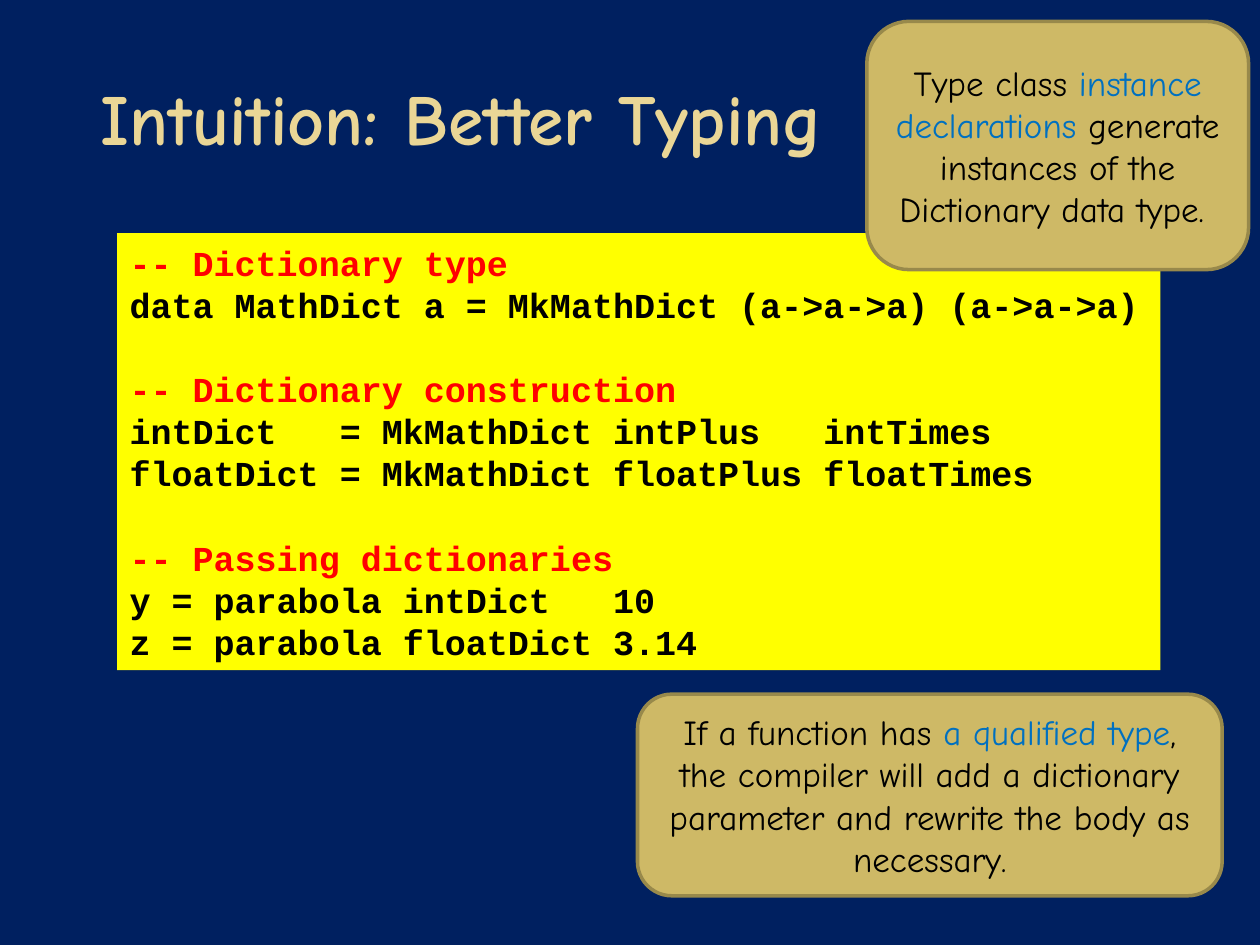
from pptx import Presentation
from pptx.dml.color import RGBColor
from pptx.enum.shapes import MSO_SHAPE
from pptx.enum.text import MSO_ANCHOR, PP_ALIGN
from pptx.util import Inches, Pt

RECTANGLE = MSO_SHAPE.RECTANGLE
CALLOUT = MSO_SHAPE.ROUNDED_RECTANGULAR_CALLOUT
TOP, MIDDLE = MSO_ANCHOR.TOP, MSO_ANCHOR.MIDDLE
LEFT, CENTER = PP_ALIGN.LEFT, PP_ALIGN.CENTER

COLORS = {
    "navy": "002060",
    "cream": "EAD696",
    "yellow": "FFFF00",
    "sand": "CEB966",
    "bronze": "98894B",
    "red": "FF0000",
    "blue": "0070C0",
    "black": "000000",
}
SANS, MONO = "Comic Neue", "Courier New"


def color(name):
    return RGBColor.from_string(COLORS[name])


def add_span(para, text, *, font=SANS, size=20, ink="black", bold=False):
    span = para.add_run()
    span.text = text
    span.font.name = font
    span.font.size = Pt(size)
    span.font.bold = bold
    span.font.color.rgb = color(ink)


deck = Presentation()
deck.slide_width, deck.slide_height = Inches(10), Inches(7.5)
page = deck.slides.add_slide(deck.slide_layouts[6])
page.background.fill.solid()
page.background.fill.fore_color.rgb = color("navy")

# Title
title = page.shapes.add_textbox(Inches(0.5), Inches(0.3), Inches(6.33), Inches(1.25))
title.text_frame.word_wrap = True
title.text_frame.vertical_anchor = MIDDLE
para = title.text_frame.paragraphs[0]
para.alignment = CENTER
add_span(para, "Intuition: Better Typing", size=41, ink="cream", bold=True)

# Code panel: each section is a red comment followed by its code
SECTIONS = [
    ("-- Dictionary type",
     "data MathDict a = MkMathDict (a->a->a) (a->a->a)"),
    ("-- Dictionary construction",
     "intDict   = MkMathDict intPlus   intTimes",
     "floatDict = MkMathDict floatPlus floatTimes"),
    ("-- Passing dictionaries",
     "y = parabola intDict   10",
     "z = parabola floatDict 3.14"),
]
LINE_PITCH = Pt(24)
panel = page.shapes.add_shape(
    RECTANGLE, Inches(0.93), Inches(1.85), Inches(8.28), Inches(3.47))
panel.shadow.inherit = False
panel.fill.solid()
panel.fill.fore_color.rgb = color("yellow")
panel.line.fill.background()
frame = panel.text_frame
frame.word_wrap = False
frame.vertical_anchor = TOP
frame.margin_top = Inches(0.07)
for section_number, lines in enumerate(SECTIONS):
    for line_number, line in enumerate(lines):
        is_comment = line_number == 0
        is_first = is_comment and section_number == 0
        para = frame.paragraphs[0] if is_first else frame.add_paragraph()
        para.alignment = LEFT
        para.line_spacing = LINE_PITCH
        if is_comment and not is_first:
            para.space_before = LINE_PITCH
        add_span(para, line, font=MONO, ink="red" if is_comment else "black", bold=True)

# Callouts
CALLOUTS = [
    ((6.88, 0.17, 3.03, 1.97),
     [("Type class ", "black"),
      ("instance declarations ", "blue"),
      ("generate instances of the Dictionary data type. ", "black")]),
    ((5.06, 5.51, 4.64, 1.6),
     [("If a function has ", "black"),
      ("a qualified type", "blue"),
      (", the compiler will add a dictionary parameter "
       "and rewrite the body as necessary.", "black")]),
]
for bounds, spans in CALLOUTS:
    callout = page.shapes.add_shape(CALLOUT, *map(Inches, bounds))
    for index, value in enumerate((-0.24, 0.5, 0.17)):
        callout.adjustments[index] = value
    callout.shadow.inherit = False
    callout.fill.solid()
    callout.fill.fore_color.rgb = color("sand")
    callout.line.color.rgb = color("bronze")
    callout.line.width = Pt(2)
    callout.text_frame.word_wrap = True
    callout.text_frame.vertical_anchor = MIDDLE
    para = callout.text_frame.paragraphs[0]
    para.alignment = CENTER
    for text, ink in spans:
        add_span(para, text, ink=ink)

deck.save("out.pptx")
